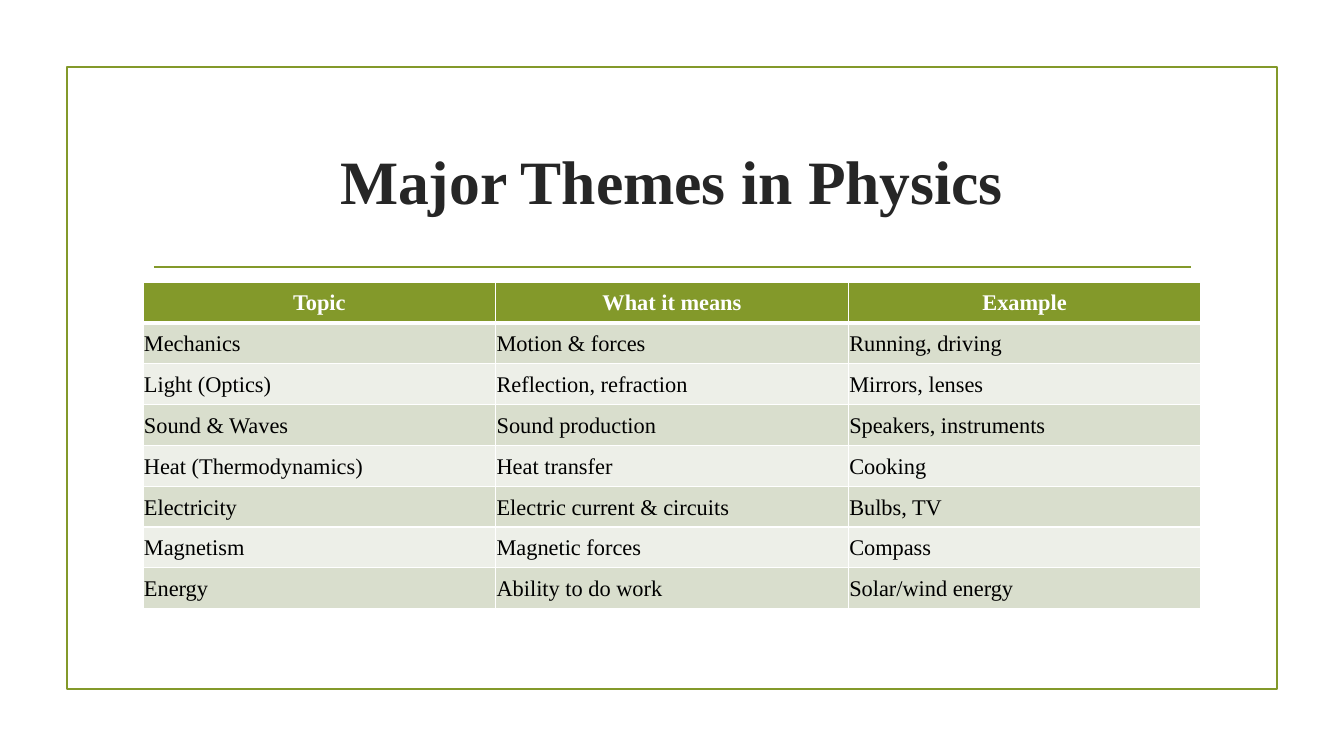
"""Build the slide on the major themes in physics."""
from lxml import etree
from pptx import Presentation
from pptx.dml.color import RGBColor
from pptx.enum.shapes import MSO_CONNECTOR, MSO_SHAPE
from pptx.enum.text import MSO_ANCHOR, MSO_AUTO_SIZE, PP_ALIGN
from pptx.oxml import parse_xml
from pptx.oxml.ns import nsdecls, qn
from pptx.util import Pt

RECT = MSO_SHAPE.RECTANGLE
STRAIGHT = MSO_CONNECTOR.STRAIGHT
MIDDLE = MSO_ANCHOR.MIDDLE
FIXED = MSO_AUTO_SIZE.NONE
LEFT, CENTER = PP_ALIGN.LEFT, PP_ALIGN.CENTER

SCALE = 914400 / 100.8
FONT = "Times New Roman"
COLORS = {
    "green": "83992A",
    "title": "262626",
    "text": "000000",
    "white": "FFFFFF",
    "dark": "D9DECD",
    "light": "EDEFE8",
}
ROWS = [
    ("Topic", "What it means", "Example"),
    ("Mechanics", "Motion & forces", "Running, driving"),
    ("Light (Optics)", "Reflection, refraction", "Mirrors, lenses"),
    ("Sound & Waves", "Sound production", "Speakers, instruments"),
    ("Heat (Thermodynamics)", "Heat transfer", "Cooking"),
    ("Electricity", "Electric current & circuits", "Bulbs, TV"),
    ("Magnetism", "Magnetic forces", "Compass"),
    ("Energy", "Ability to do work", "Solar/wind energy"),
]


def px(*sizes):
    return [round(size * SCALE) for size in sizes]


def rgb(name):
    return RGBColor.from_string(COLORS[name])


def put_text(frame, text, size=16, color="text", bold=False, align=LEFT, space=None):
    para = frame.paragraphs[0]
    para.alignment = align
    para.line_spacing = space
    run = para.add_run()
    run.text = text
    font = run.font
    font.name = FONT
    font.size = Pt(size)
    font.bold = bold
    font.color.rgb = rgb(color)


def set_line(line):
    line.color.rgb = rgb("green")
    line.width = Pt(1.25)


def add_frame(slide, *box):
    frame = slide.shapes.add_shape(RECT, *px(*box))
    frame.shadow.inherit = False
    frame.fill.background()
    set_line(frame.line)


def add_rule(slide, *ends):
    rule = slide.shapes.add_connector(STRAIGHT, *px(*ends))
    set_line(rule.line)
    etree.SubElement(rule._element.spPr, qn("a:effectLst"))


def add_title(slide, text, *box):
    title = slide.shapes.title
    title.left, title.top, title.width, title.height = px(*box)
    frame = title.text_frame
    frame.word_wrap = True
    frame.auto_size = FIXED
    frame.vertical_anchor = MIDDLE
    put_text(frame, text, size=44, color="title", bold=True, align=CENTER)


def set_edges(cell, **widths):
    props = cell._tc.get_or_add_tcPr()
    for side, width in widths.items():
        props.append(parse_xml(
            f'<a:ln{side} {nsdecls("a")} w="{Pt(width)}"><a:solidFill>'
            f'<a:srgbClr val="{COLORS["white"]}"/></a:solidFill></a:ln{side}>'
        ))


def fill_cell(cell, text, row):
    head = row == 0
    cell.margin_left = cell.margin_right = cell.margin_top = cell.margin_bottom = px(1)[0]
    cell.vertical_anchor = MIDDLE
    set_edges(cell, L=1, R=1, T=3 if row == 1 else 1, B=3 if head else 1)
    cell.fill.solid()
    cell.fill.fore_color.rgb = rgb("green" if head else ("light", "dark")[row % 2])
    put_text(cell.text_frame, text, color="white" if head else "text", bold=head,
             align=CENTER if head else LEFT, space=1.07)


def add_grid(slide, rows, *box):
    left, top, width, height = px(*box)
    shape = slide.shapes.add_table(len(rows), len(rows[0]), left, top, width, height)
    table = shape.table
    table.horz_banding = False
    for line in table.rows:
        line.height = height // len(rows)
    for row, texts in enumerate(rows):
        for col, text in enumerate(texts):
            fill_cell(table.cell(row, col), text, row)


def main():
    deck = Presentation()
    deck.slide_width, deck.slide_height = px(1344, 756)
    slide = deck.slides.add_slide(deck.slide_layouts[5])
    add_frame(slide, 67, 67, 1210, 622)
    add_rule(slide, 154, 267, 1191, 267)
    add_title(slide, "Major Themes in Physics", 143, 108, 1058, 144)
    add_grid(slide, ROWS, 143, 282, 1058, 327)
    deck.save("out.pptx")


if __name__ == "__main__":
    main()
